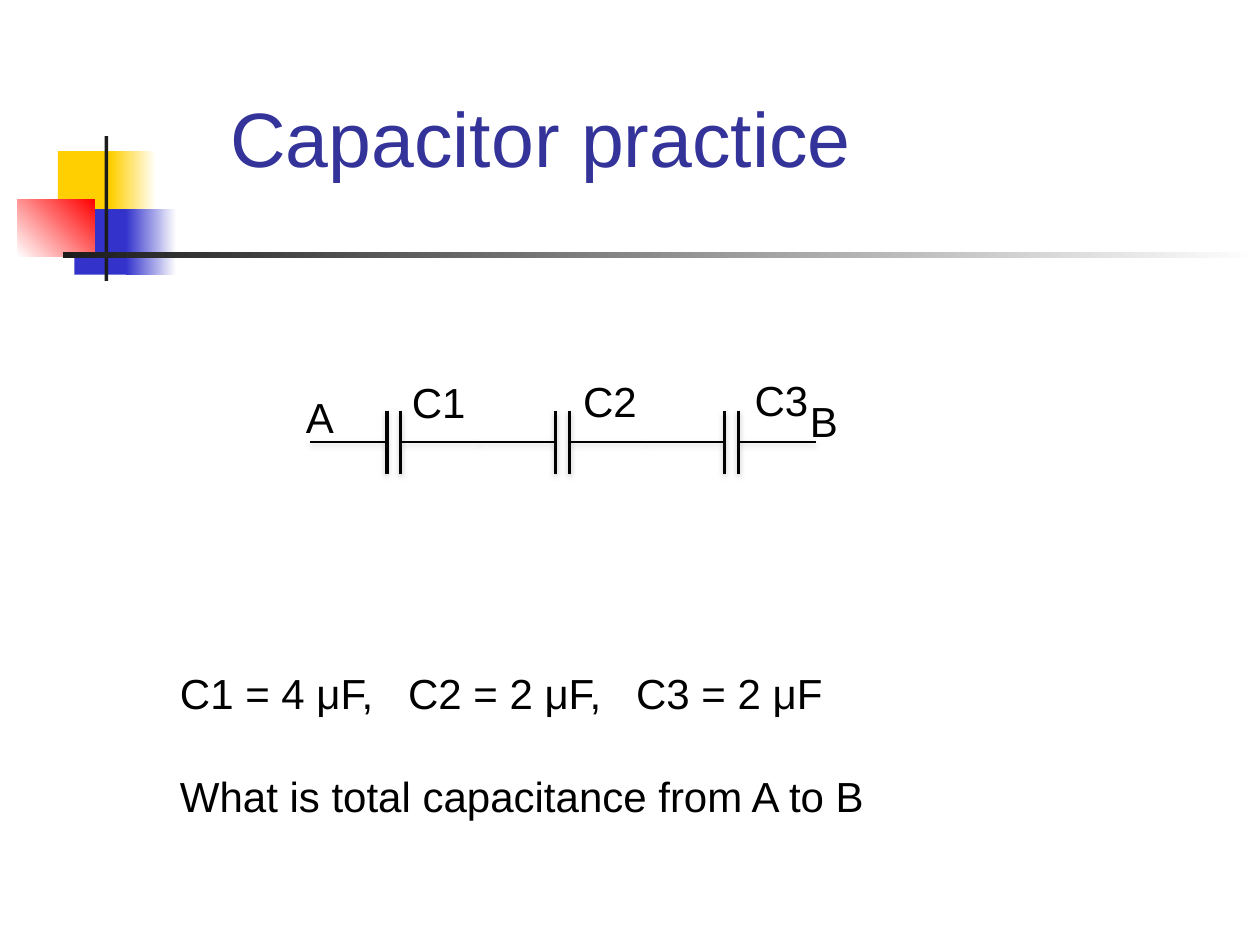
import pptx
import pptx.dml.color
import pptx.enum.shapes
import pptx.enum.text
import pptx.oxml
import pptx.oxml.ns
import pptx.util

Inches = pptx.util.Inches
Pt = pptx.util.Pt

COLORS = {
    "yellow": "FFCF01",
    "blue": "3333CC",
    "red": "FF0000",
    "dark": "1C1C1C",
    "white": "FFFFFF",
    "title": "333399",
    "black": "000000",
    "shadow": "808080",
}

ORNAMENTS = [
    ((0.46, 1.2, 0.48, 0.52), ["yellow"], 0),
    ((0.88, 1.2, 0.36, 0.52), ["yellow", "white"], 0),
    ((0.59, 1.66, 0.46, 0.52), ["blue"], 0),
    ((1, 1.66, 0.4, 0.52), ["blue", "white"], 0),
    ((0.14, 1.58, 0.61, 0.46), ["white", "red"], 45),
    ((0.83, 1.08, 0.03, 1.15), ["dark"], 0),
    ((0.5, 2, 9.5, 0.05), ["dark", "white"], 0),
]

LABELS = [
    ("A", (2.33, 3.06, 0.43, 0.4)),
    ("B", (6.33, 3.09, 0.42, 0.4)),
    ("C1", (3.17, 2.94, 0.77, 0.5)),
    ("C2", (4.53, 2.93, 0.77, 0.5)),
    ("C3", (5.89, 2.92, 0.77, 0.5)),
]

WIRE_Y = 3.51
PLATE_HALF = 0.25
PLATE_GAP = 0.11
LEAD = 0.61
FIRST_PLATE = 3.07
CAPACITOR_STEP = 1.34
VALUE_TAB = 1.81


def rgb(name):
    return pptx.dml.color.RGBColor.from_string(COLORS[name])


def apply_format(target, values):
    for name, value in values.items():
        setattr(target, name, value)


def add_ornament(page, place, colors, angle):
    block = page.shapes.add_shape(
        pptx.enum.shapes.MSO_SHAPE.RECTANGLE, *map(Inches, place))
    block.shadow.inherit = False
    block.line.fill.background()
    if len(colors) == 1:
        block.fill.solid()
        block.fill.fore_color.rgb = rgb(colors[0])
        return
    block.fill.gradient()
    block.fill.gradient_angle = angle
    for stop, color in zip(block.fill.gradient_stops, colors):
        stop.color.rgb = rgb(color)


def add_text(shapes, lines, place, size=24, color="black", frame_format=None, para_format=None):
    box = shapes.add_textbox(*map(Inches, place))
    frame = box.text_frame
    apply_format(frame, {"word_wrap": False, **(frame_format or {})})
    for index, line in enumerate(lines):
        para = frame.paragraphs[0] if index == 0 else frame.add_paragraph()
        if index:
            apply_format(para, para_format or {})
        span = para.add_run()
        span.text = line
        apply_format(span.font, {"name": "Arial", "size": Pt(size)})
        span.font.color.rgb = rgb(color)
    return box


def add_tab_stops(para, positions):
    stops = "".join(f'<a:tab pos="{Inches(pos)}" algn="l"/>' for pos in positions)
    para._p.get_or_add_pPr().append(pptx.oxml.parse_xml(
        f'<a:tabLst {pptx.oxml.ns.nsdecls("a")}>{stops}</a:tabLst>'))


def add_line(shapes, start, end, width):
    line = shapes.add_connector(
        pptx.enum.shapes.MSO_CONNECTOR.STRAIGHT, *map(Inches, start + end))
    line.line.color.rgb = rgb("black")
    line.line.width = Pt(width)
    line._element.spPr.append(pptx.oxml.parse_xml(
        f'<a:effectLst {pptx.oxml.ns.nsdecls("a")}>'
        f'<a:outerShdw blurRad="{Pt(3.1)}" dist="{Pt(1.6)}" dir="5400000" rotWithShape="0">'
        f'<a:srgbClr val="{COLORS["shadow"]}"><a:alpha val="38000"/></a:srgbClr>'
        '</a:outerShdw></a:effectLst>'))


def add_capacitor(shapes, left):
    right = left + PLATE_GAP
    for x in (left, right):
        add_line(shapes, (x, WIRE_Y - PLATE_HALF), (x, WIRE_Y + PLATE_HALF), 2)
    for plate, end in ((left, left - LEAD), (right, right + LEAD + 0.01)):
        add_line(shapes, (plate, WIRE_Y), (end, WIRE_Y), 1)


def add_circuit(page):
    circuit = page.shapes.add_group_shape()
    for index in range(3):
        add_capacitor(circuit.shapes, FIRST_PLATE + index * CAPACITOR_STEP)
    for text, place in LABELS:
        add_text(circuit.shapes, [text], place)


def main():
    deck = pptx.Presentation()
    apply_format(deck, {"slide_width": Inches(10), "slide_height": Inches(7.5)})
    page = deck.slides.add_slide(deck.slide_layouts[6])
    for place, colors, angle in ORNAMENTS:
        add_ornament(page, place, colors, angle)
    add_text(page.shapes, ["Capacitor practice"], (1.73, 0.25, 8.52, 1.25), 44, "title",
             {"word_wrap": True, "vertical_anchor": pptx.enum.text.MSO_ANCHOR.BOTTOM})
    question = add_text(
        page.shapes,
        ["C1 = 4 μF,\tC2 = 2 μF,\tC3 = 2 μF", "What is total capacitance from A to B"],
        (1.33, 5.25, 5.68, 1.31), frame_format={"word_wrap": True},
        para_format={"space_before": Pt(30)})
    add_tab_stops(question.text_frame.paragraphs[0], [VALUE_TAB, 2 * VALUE_TAB])
    add_circuit(page)
    deck.save("out.pptx")


if __name__ == "__main__":
    main()
